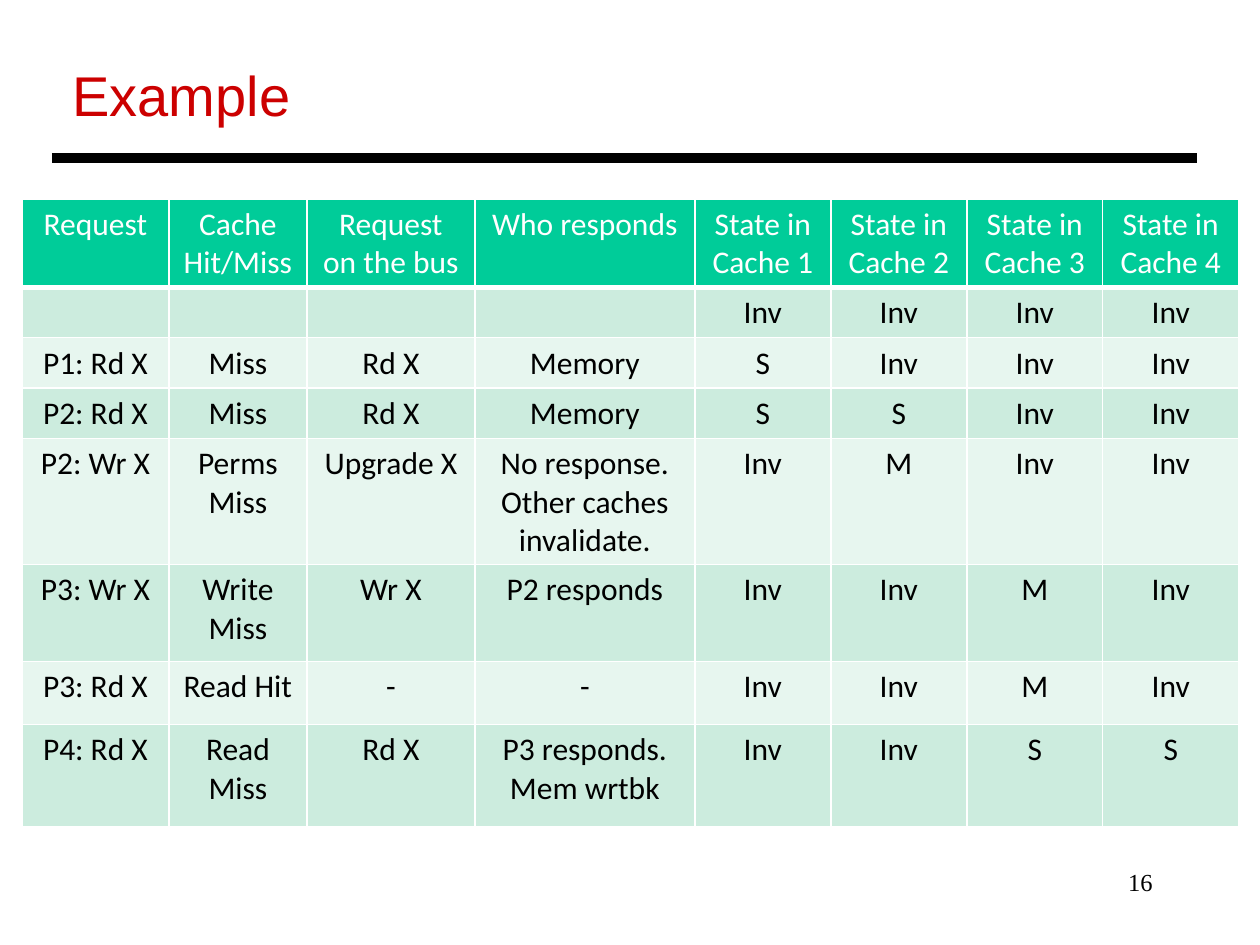
from lxml.etree import SubElement
from pptx import Presentation
from pptx.dml.color import RGBColor
from pptx.enum.shapes import MSO_CONNECTOR
from pptx.enum.text import MSO_AUTO_SIZE, PP_ALIGN
from pptx.oxml.ns import qn
from pptx.util import Pt

EMU_PER_PX = 914400 / 126
RED = RGBColor(0xCC, 0x00, 0x00)
BLACK = RGBColor(0x00, 0x00, 0x00)
WHITE = RGBColor(0xFF, 0xFF, 0xFF)
GREEN = RGBColor(0x00, 0xCC, 0x99)
BANDS = [RGBColor(0xE7, 0xF6, 0xEF), RGBColor(0xCC, 0xEC, 0xDE)]

COLUMN_WIDTHS = [147, 138, 168, 220] + [136] * 4
ROW_HEIGHTS = [88, 50, 50, 50, 126, 97, 63, 102]
HEADINGS = ["Request", "Cache\nHit/Miss", "Request\non the bus", "Who responds"]
HEADINGS += [f"State in Cache {number}" for number in range(1, 5)]
STEPS = [
    ["", "", "", "", "Inv", "Inv", "Inv", "Inv"],
    ["P1: Rd X", "Miss", "Rd X", "Memory", "S", "Inv", "Inv", "Inv"],
    ["P2: Rd X", "Miss", "Rd X", "Memory", "S", "S", "Inv", "Inv"],
    ["P2: Wr X", "Perms Miss", "Upgrade X",
     "No response.\nOther caches invalidate.", "Inv", "M", "Inv", "Inv"],
    ["P3: Wr X", "Write Miss", "Wr X", "P2 responds", "Inv", "Inv", "M", "Inv"],
    ["P3: Rd X", "Read Hit", "-", "-", "Inv", "Inv", "M", "Inv"],
    ["P4: Rd X", "Read Miss", "Rd X", "P3 responds. Mem wrtbk", "Inv", "Inv", "S", "S"],
]


def px(length):
    """Turn pixels into EMU."""
    return round(length * EMU_PER_PX)


def format_text(frame, align, color, **font_values):
    """Apply alignment, colour and font values to every paragraph."""
    for paragraph in frame.paragraphs:
        paragraph.alignment = align
        paragraph.font.color.rgb = color
        for key, value in font_values.items():
            setattr(paragraph.font, key, value)


def add_label(slide, box, text, align, color, wrap, **font_values):
    """Place a text box and return its frame."""
    frame = slide.shapes.add_textbox(*map(px, box)).text_frame
    frame.text = text
    frame.word_wrap = wrap
    format_text(frame, align, color, **font_values)
    return frame


def add_heading(slide, left, top, width):
    """Place the title and the rule beneath it."""
    title = add_label(slide, (left + 8, top, 246, 81), "Example", PP_ALIGN.LEFT,
                      RED, False, name="Arial", size=Pt(32))
    title.auto_size = MSO_AUTO_SIZE.SHAPE_TO_FIT_TEXT
    rule_y = px(top + 104)
    rule = slide.shapes.add_connector(
        MSO_CONNECTOR.STRAIGHT, px(left), rule_y, px(left + width), rule_y)
    rule.line.color.rgb = BLACK
    rule.line.width = Pt(6)
    SubElement(rule._element.spPr, qn("a:effectLst"))


def add_border(cell, side, points):
    """Draw one white edge of a cell; call before the cell is filled."""
    edge = SubElement(cell._tc.get_or_add_tcPr(), qn(f"a:ln{side}"), w=str(Pt(points)))
    SubElement(SubElement(edge, qn("a:solidFill")), qn("a:srgbClr"), val=str(WHITE))


def add_coherence_table(slide, left, top):
    """Place the table of requests and cache states."""
    rows = [HEADINGS] + STEPS
    table = slide.shapes.add_table(
        len(rows), len(HEADINGS), px(left), px(top),
        px(sum(COLUMN_WIDTHS)), px(sum(ROW_HEIGHTS))).table
    for column, width in zip(table.columns, COLUMN_WIDTHS):
        column.width = px(width)
    for row, height in zip(table.rows, ROW_HEIGHTS):
        row.height = px(height)
    for row_index, texts in enumerate(rows):
        is_header = row_index == 0
        for column_index, text in enumerate(texts):
            cell = table.cell(row_index, column_index)
            if is_header:
                for side, points in {"L": 1, "R": 1, "T": 1, "B": 3}.items():
                    add_border(cell, side, points)
            cell.fill.solid()
            cell.fill.fore_color.rgb = GREEN if is_header else BANDS[row_index % 2]
            cell.text = text
            format_text(cell.text_frame, PP_ALIGN.CENTER, WHITE if is_header else BLACK,
                        name="Calibri", size=Pt(18), bold=False)


def main():
    """Build and save the slide."""
    deck = Presentation()
    deck.slide_width, deck.slide_height = px(1260), px(945)
    slide = deck.slides.add_slide(deck.slide_layouts[6])
    add_label(slide, (903, 861, 262, 63), "16", PP_ALIGN.RIGHT, BLACK, True,
              name="Times New Roman", size=Pt(14))
    add_heading(slide, 52, 54, 1145)
    add_coherence_table(slide, 22, 199)
    deck.save("out.pptx")


if __name__ == "__main__":
    main()
